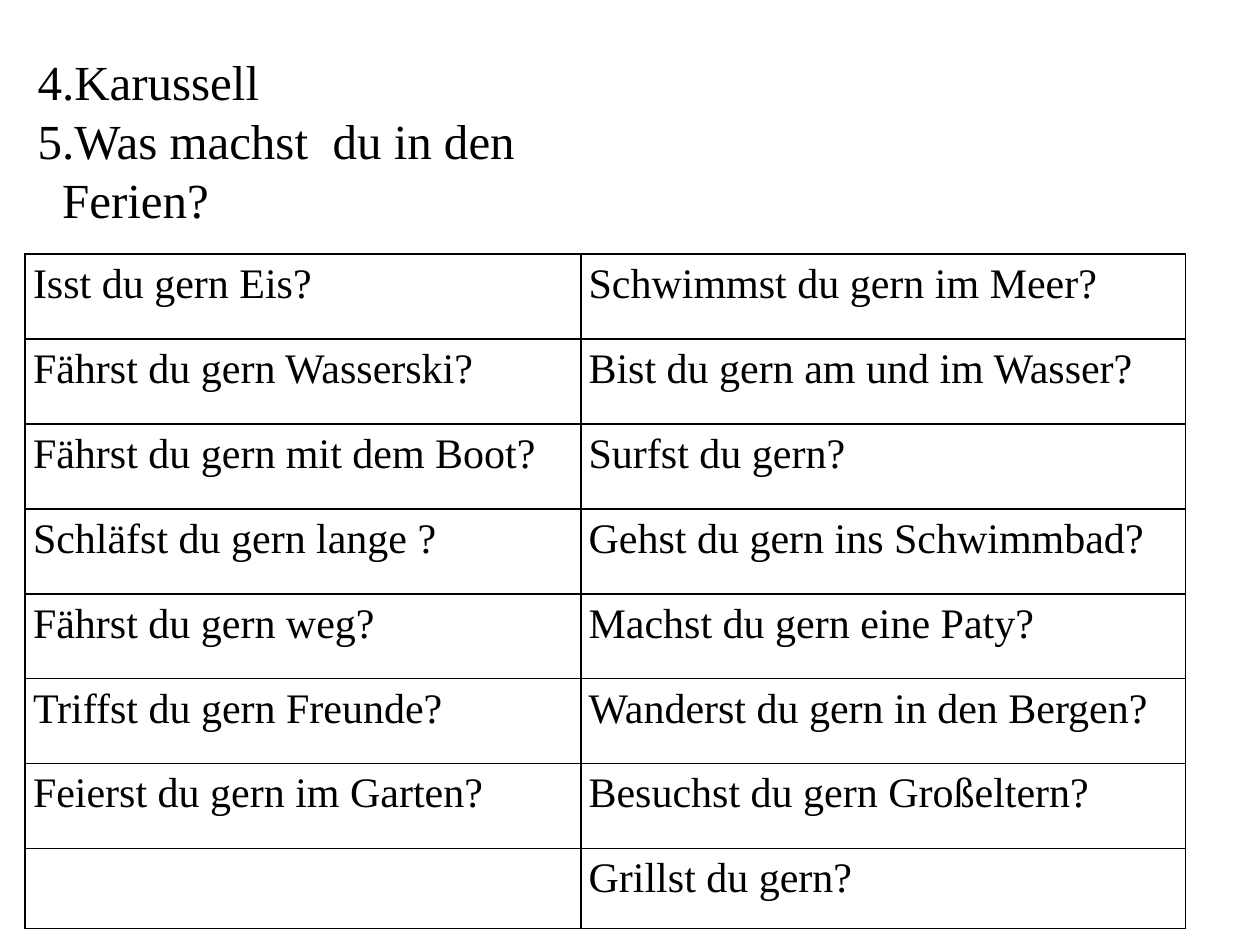
from lxml import etree
from pptx import Presentation
from pptx.dml.color import RGBColor
from pptx.oxml.ns import qn
from pptx.util import Pt

HEADING = ["4.Karussell", "5.Was machst  du in den Ferien?"]
QUESTIONS = [
    ("Isst du gern Eis?", "Schwimmst du gern im Meer?"),
    ("Fährst du gern Wasserski?", "Bist du gern am und im Wasser?"),
    ("Fährst du gern mit dem Boot?", "Surfst du gern?"),
    ("Schläfst du gern lange ?", "Gehst du gern ins Schwimmbad?"),
    ("Fährst du gern weg?", "Machst du gern eine Paty?"),
    ("Triffst du gern Freunde?", "Wanderst du gern in den Bergen?"),
    ("Feierst du gern im Garten?", "Besuchst du gern Großeltern?"),
    ("", "Grillst du gern?"),
]
COLORS = {"ink": "000000"}
LEFT = 14.4
HEADING_TOP, HEADING_W, HEADING_H = 26, 306, 109
HANGING = 14
TABLE_TOP = 145.2
COL_WIDTHS = [317.5, 345.6]
ROW_H, LAST_ROW_H = 48.55, 45.7
CELL_FORMAT = {"margin_left": Pt(4.5), "margin_right": Pt(4.5),
               "margin_top": 0, "margin_bottom": 0}


def write(p, words, size):
    r = p.add_run()
    r.text = words
    for name, value in {"name": "Times New Roman", "size": Pt(size)}.items():
        setattr(r.font, name, value)
    r.font.color.rgb = RGBColor.from_string(COLORS["ink"])


def add_borders(cell):
    """Draw all four cell edges; call before setting the cell's fill."""
    props = cell._tc.get_or_add_tcPr()
    for side in ("lnL", "lnR", "lnT", "lnB"):
        line = etree.SubElement(props, qn(f"a:{side}"), w=str(Pt(1)))
        fill = etree.SubElement(line, qn("a:solidFill"))
        etree.SubElement(fill, qn("a:srgbClr"), val=COLORS["ink"])


def add_heading(s):
    sp = s.shapes.add_textbox(Pt(LEFT), Pt(HEADING_TOP), Pt(HEADING_W), Pt(HEADING_H))
    tf = sp.text_frame
    tf.word_wrap = True
    for i, words in enumerate(HEADING):
        p = tf.add_paragraph() if i else tf.paragraphs[0]
        props = p._p.get_or_add_pPr()
        props.set("marL", str(Pt(HANGING)))
        props.set("indent", str(Pt(-HANGING)))
        write(p, words, 28)


def add_questions(s):
    heights = [ROW_H] * (len(QUESTIONS) - 1) + [LAST_ROW_H]
    table = s.shapes.add_table(len(heights), len(COL_WIDTHS), Pt(LEFT), Pt(TABLE_TOP),
                               Pt(sum(COL_WIDTHS)), Pt(sum(heights))).table
    table.first_row = table.horz_banding = False
    for column, width in zip(table.columns, COL_WIDTHS):
        column.width = Pt(width)
    for row, height, questions in zip(table.rows, heights, QUESTIONS):
        row.height = Pt(height)
        for cell, words in zip(row.cells, questions):
            for name, value in CELL_FORMAT.items():
                setattr(cell, name, value)
            add_borders(cell)
            cell.fill.background()
            if words:
                p = cell.text_frame.paragraphs[0]
                p.line_spacing = 1.15
                write(p, words, 24)


def main():
    prs = Presentation()
    prs.slide_width, prs.slide_height = Pt(720), Pt(540)
    s = prs.slides.add_slide(prs.slide_layouts[6])
    add_heading(s)
    add_questions(s)
    prs.save("out.pptx")


if __name__ == "__main__":
    main()
